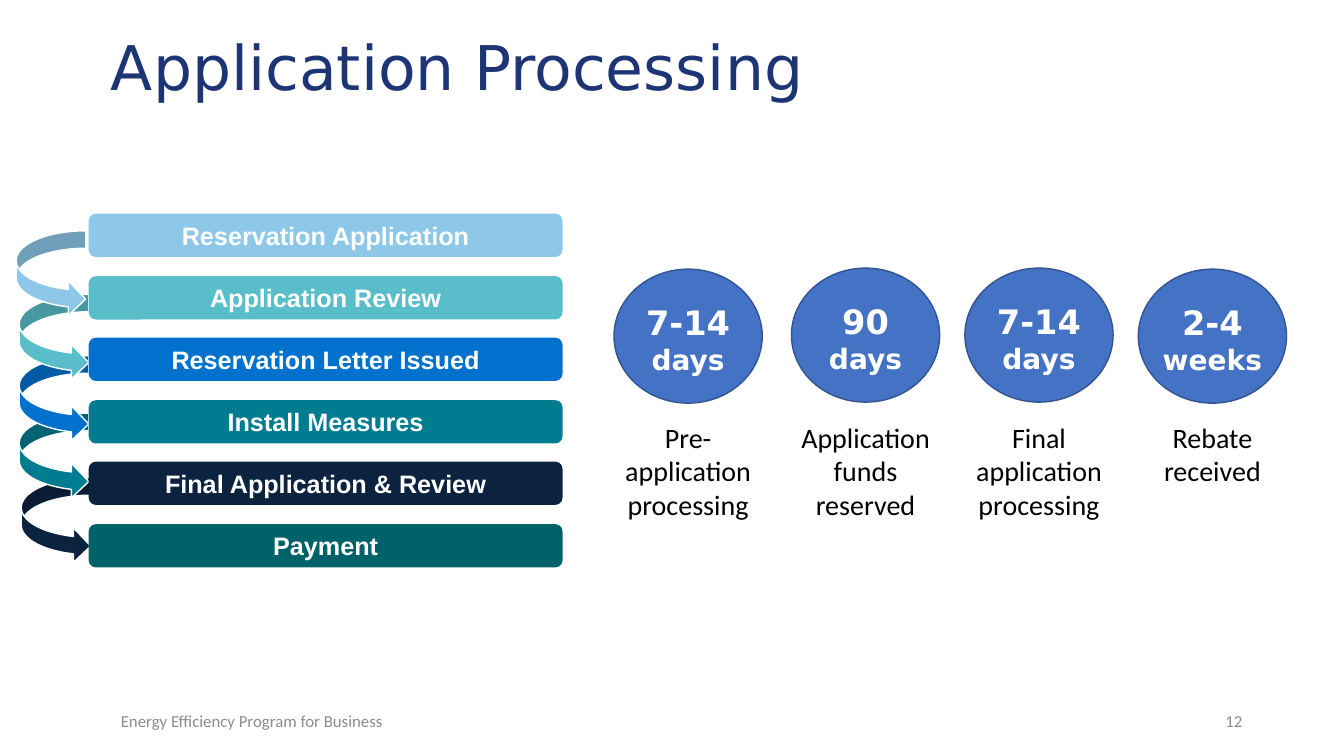
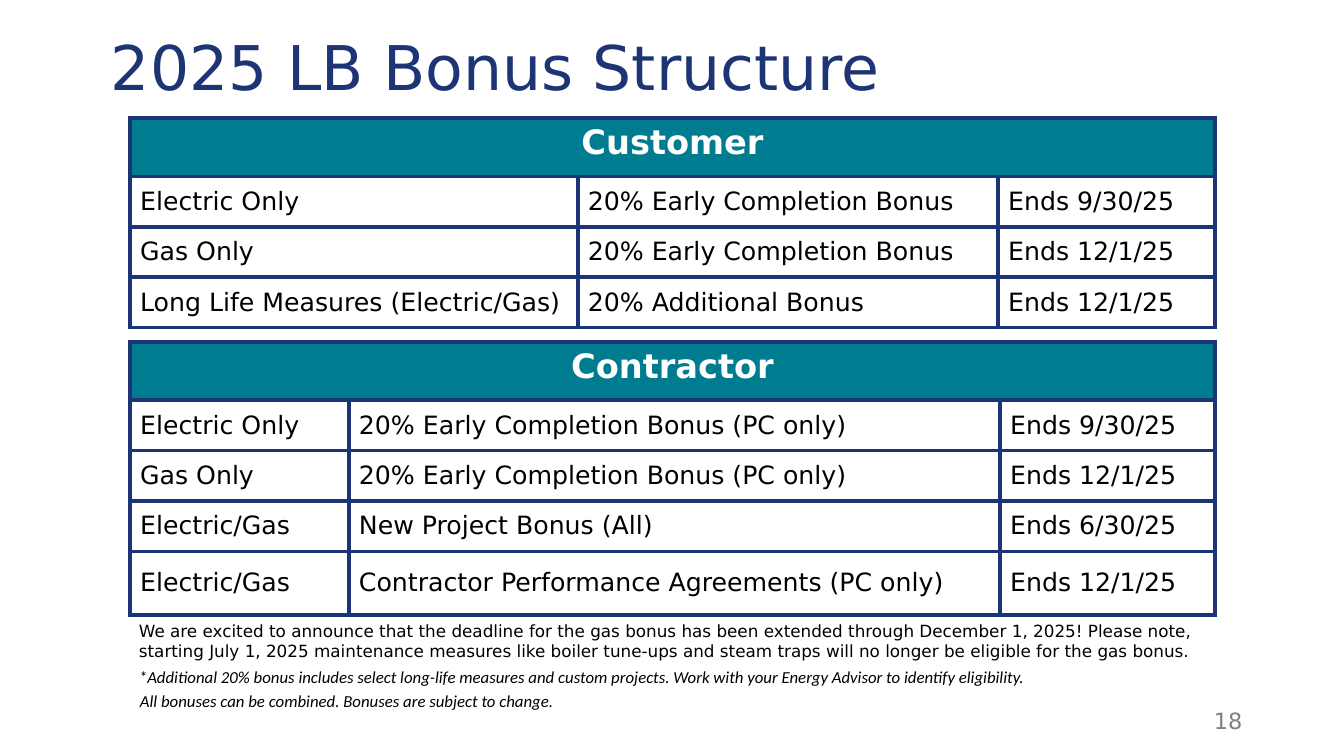
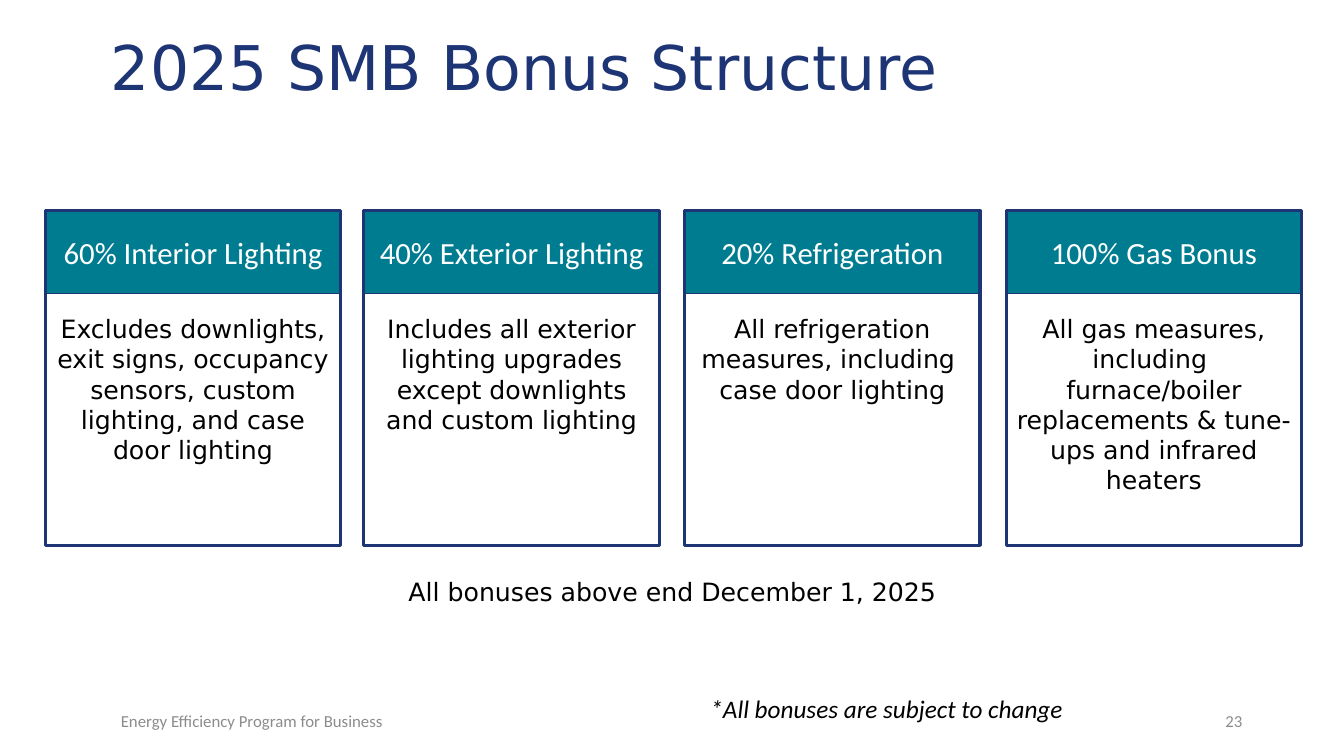
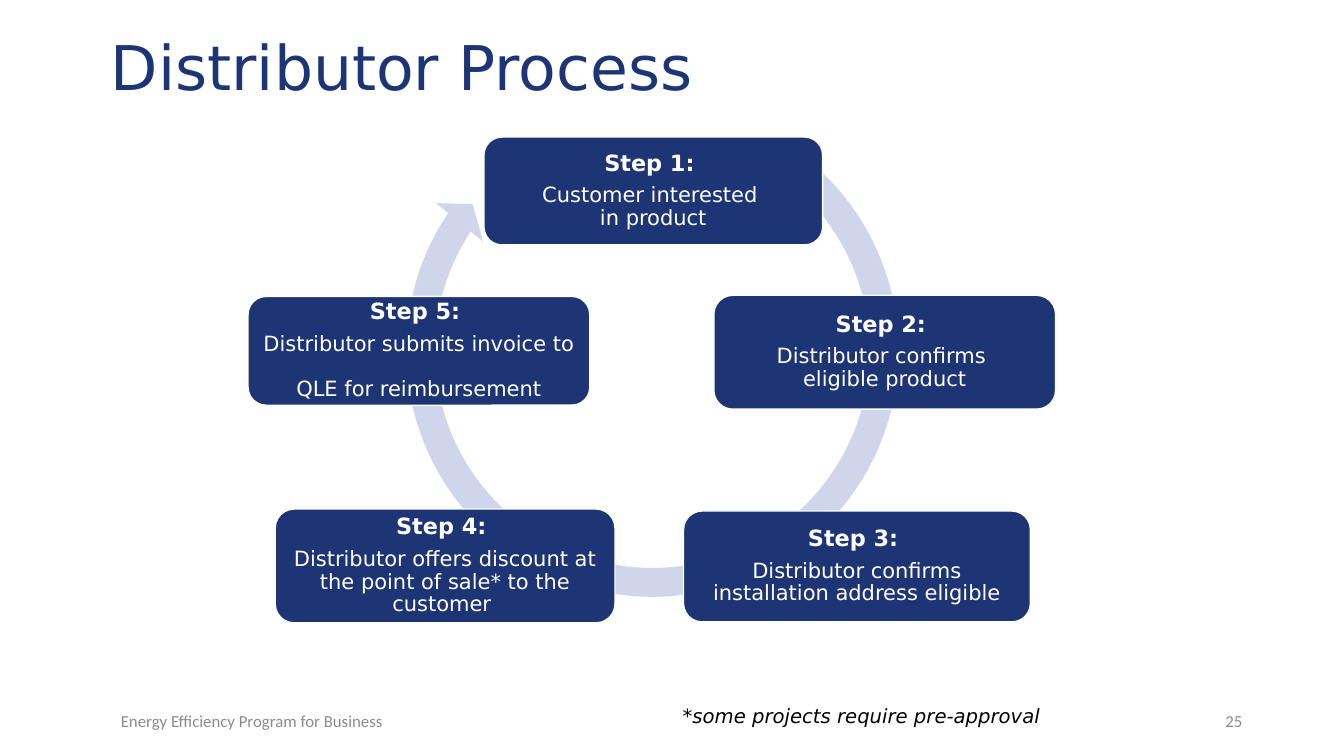
from copy import deepcopy

from lxml import etree
from pptx import Presentation
from pptx import util as u
from pptx.dml.color import RGBColor
from pptx.enum import shapes, text
from pptx.oxml import ns

# Colours
NAVY = RGBColor(0x1E, 0x35, 0x75)
TEAL = RGBColor(0x00, 0x7C, 0x91)
SKY = RGBColor(0x8D, 0xC8, 0xE8)
AQUA = RGBColor(0x59, 0xBE, 0xC9)
AZURE = RGBColor(0x00, 0x72, 0xCE)
MIDNIGHT = RGBColor(0x0C, 0x23, 0x40)
PINE = RGBColor(0x00, 0x62, 0x69)
BLUE = RGBColor(0x44, 0x72, 0xC4)
DEEP_BLUE = RGBColor(0x32, 0x54, 0x91)
PALE = RGBColor(0xCF, 0xD5, 0xEA)
GREY = RGBColor(0x8C, 0x8C, 0x8C)
MID_GREY = RGBColor(0x80, 0x80, 0x80)
BLACK = RGBColor(0, 0, 0)
WHITE = RGBColor(255, 255, 255)

PX = 9144  # EMU in one px, 100 px to the inch
SANS, CALIBRI, ARIAL = "DejaVu Sans", "Calibri", "Arial"
LEFT, CENTER, RIGHT = text.PP_ALIGN.LEFT, text.PP_ALIGN.CENTER, text.PP_ALIGN.RIGHT
TOP, MIDDLE = text.MSO_ANCHOR.TOP, text.MSO_ANCHOR.MIDDLE
KIND = shapes.MSO_SHAPE
TITLE_AND_BODY, TITLE_ONLY = 1, 5
PARA_KEYS = ("alignment", "line_spacing", "space_before", "space_after")


def look(size, name=SANS, color=BLACK, alignment=LEFT, **more):
    return dict(size=u.Pt(size), name=name, color=color, alignment=alignment, **more)


class Deck:
    """Holds the presentation, its style and the current page."""

    title_look = look(44, color=NAVY, line_spacing=0.9)
    footer_look = look(12, CALIBRI, GREY)

    def __init__(self):
        self.deck = Presentation()
        self.deck.slide_width, self.deck.slide_height = 1333 * PX, 750 * PX
        self.page = None

    def new_page(self, title, number, number_look=None, footer=True, layout=TITLE_ONLY):
        self.page = self.deck.slides.add_slide(self.deck.slide_layouts[layout])
        self.placeholder(0, (0, 0, 1333, 139), [(title, self.title_look)], MIDDLE, (110, 5, 10, 5))
        number_look = number_look or self.footer_look
        self.label((942, 695, 300, 40), [(number, {**number_look, "alignment": RIGHT})], MIDDLE)
        if footer:
            self.label((110, 695, 600, 40),
                       [("Energy Efficiency Program for Business", self.footer_look)], MIDDLE)

    def set_lines(self, frame, lines, anchor=TOP, insets=(10, 5, 10, 5)):
        """Put (text, look) paragraphs in a text frame."""
        sides = ("margin_left", "margin_top", "margin_right", "margin_bottom")
        settings = {"word_wrap": True, "auto_size": text.MSO_AUTO_SIZE.NONE, "vertical_anchor": anchor}
        settings.update((side, inset * PX) for side, inset in zip(sides, insets))
        for key, value in settings.items():
            setattr(frame, key, value)
        for index, (words, style) in enumerate(lines):
            para = frame.add_paragraph() if index else frame.paragraphs[0]
            self.set_para(para, words, style)

    def set_para(self, para, words, style):
        para.text = words
        for key, value in style.items():
            if key in PARA_KEYS:
                setattr(para, key, value)
                continue
            for span in para.runs:
                if key == "color":
                    span.font.color.rgb = value
                else:
                    setattr(span.font, key, value)
        # Line breaks take the size of the text around them
        for line_break in para._p.findall(ns.qn("a:br")):
            line_break.append(deepcopy(para.runs[0]._r.rPr))

    def placeholder(self, index, at, lines, anchor=TOP, insets=(10, 5, 10, 5)):
        box = self.page.placeholders[index]
        for key, value in zip(("left", "top", "width", "height"), at):
            setattr(box, key, value * PX)
        self.set_lines(box.text_frame, lines, anchor, insets)
        return box

    def label(self, at, lines, anchor=TOP):
        box = self.page.shapes.add_textbox(*(n * PX for n in at))
        self.set_lines(box.text_frame, lines, anchor)

    def shape(self, kind, at, fill=None, line=None, weight=1, lines=(), anchor=MIDDLE,
              insets=(10, 5, 10, 5)):
        box = self.page.shapes.add_shape(kind, *(n * PX for n in at))
        box.shadow.inherit = False
        for paint, color in ((box.fill, fill), (box.line.fill, line)):
            if color is None:
                paint.background()
            else:
                paint.solid()
                paint.fore_color.rgb = color
        if line is not None:
            box.line.width = u.Pt(weight)
        self.set_lines(box.text_frame, lines, anchor, insets)
        return box

    def table(self, left, top, widths, heights, heading, rows):
        size = (left, top, sum(widths), sum(heights))
        grid = self.page.shapes.add_table(len(heights), len(widths), *(n * PX for n in size)).table
        grid.first_row = grid.horz_banding = False
        for column, width in zip(grid.columns, widths):
            column.width = width * PX
        for row, height in zip(grid.rows, heights):
            row.height = height * PX
        grid.cell(0, 0).merge(grid.cell(0, len(widths) - 1))
        for cell in grid.iter_cells():
            cell.fill.background()
            self.border(cell)
        head = grid.cell(0, 0)
        head.fill.solid()
        head.fill.fore_color.rgb = TEAL
        self.set_para(head.text_frame.paragraphs[0], heading, look(24, SANS, WHITE, CENTER, bold=True))
        for r, row in enumerate(rows, 1):
            for c, words in enumerate(row):
                cell = grid.cell(r, c)
                cell.vertical_anchor = MIDDLE
                self.set_para(cell.text_frame.paragraphs[0], words, look(18))

    def border(self, cell):
        props = cell._tc.get_or_add_tcPr()
        for index, side in enumerate(("lnL", "lnR", "lnT", "lnB")):
            edge = etree.Element(ns.qn("a:" + side), w=str(u.Pt(3)))
            paint = etree.SubElement(edge, ns.qn("a:solidFill"))
            etree.SubElement(paint, ns.qn("a:srgbClr"), val=str(NAVY))
            props.insert(index, edge)


def application_processing(deck):
    deck.new_page("Application Processing", "12")

    # Curved arrows, the first one in front
    arrows = ((16, 229, SKY), (19, 292, AQUA), (19, 353, AZURE), (19, 410, TEAL), (21, 474, MIDNIGHT))
    for left, top, color in reversed(arrows):
        deck.shape(KIND.CURVED_RIGHT_ARROW, (left, top, 69, 85), color, WHITE)

    # Stage bars
    stages = (("Reservation Application", SKY), ("Application Review", AQUA),
              ("Reservation Letter Issued", AZURE), ("Install Measures", TEAL),
              ("Final Application & Review", MIDNIGHT), ("Payment", PINE))
    stage_look = look(18, ARIAL, WHITE, CENTER, bold=True)
    for index, (name, color) in enumerate(stages):
        deck.shape(KIND.ROUNDED_RECTANGLE, (88, round(212 + 61.6 * index), 470, 43), color,
                   lines=[(name, stage_look)])

    # Durations with captions
    durations = ((609, 267, "7-14", "days", "Pre-application\nprocessing"),
                 (785, 266, "90", "days", "Application funds reserved"),
                 (957, 266, "7-14", "days", "Final application\nprocessing"),
                 (1129, 267, "2-4", "weeks", "Rebate received"))
    for left, top, count, unit, caption in durations:
        deck.shape(KIND.OVAL, (left, top, 147, 133), BLUE, DEEP_BLUE, insets=(0, 6, 0, 0),
                   lines=[(count, look(24, SANS, WHITE, CENTER, bold=True)),
                          (unit, look(20, SANS, WHITE, CENTER, bold=True))])
        deck.label((left - 5, 412, 157, 111), [(caption, look(20, CALIBRI, BLACK, CENTER))])


def large_business_bonus(deck):
    deck.new_page("2025 LB Bonus Structure", "18", look(16, SANS, MID_GREY), footer=False)
    deck.table(129, 117, (444, 417, 215), (58, 50, 50, 50), "Customer", (
        ("Electric Only", "20% Early Completion Bonus", "Ends 9/30/25"),
        ("Gas Only", "20% Early Completion Bonus", "Ends 12/1/25"),
        ("Long Life Measures (Electric/Gas)", "20% Additional Bonus", "Ends 12/1/25")))
    deck.table(129, 339, (217, 646, 213), (58, 50, 50, 50, 63), "Contractor", (
        ("Electric Only", "20% Early Completion Bonus (PC only)", "Ends 9/30/25"),
        ("Gas Only", "20% Early Completion Bonus (PC only)", "Ends 12/1/25"),
        ("Electric/Gas", "New Project Bonus (All)", "Ends 6/30/25"),
        ("Electric/Gas", "Contractor Performance Agreements (PC only)", "Ends 12/1/25")))

    # Notes under the tables
    small = look(12, CALIBRI, italic=True)
    deck.label((128, 611, 1076, 50), [(
        "We are excited to announce that the deadline for the gas bonus has been extended through "
        "December 1, 2025! Please note, starting July 1, 2025 maintenance measures like boiler "
        "tune-ups and steam traps will no longer be eligible for the gas bonus.", look(12))])
    deck.label((128, 657, 1076, 30), [(
        "*Additional 20% bonus includes select long-life measures and custom projects. "
        "Work with your Energy Advisor to identify eligibility.", small)])
    deck.label((129, 680, 1046, 30),
               [("All bonuses can be combined. Bonuses are subject to change.", small)])


def small_business_bonus(deck):
    deck.new_page("2025 SMB Bonus Structure", "23")

    # Bonus cards
    cards = ((45, "60% Interior Lighting",
              ("Excludes downlights, exit signs, occupancy sensors, custom lighting, "
               "and case door lighting",)),
             (361, "40% Exterior Lighting",
              ("Includes all exterior lighting upgrades except downlights and custom lighting",)),
             (679, "20% Refrigeration",
              ("All refrigeration measures, including ", "case door lighting")),
             (998, "100% Gas Bonus",
              ("All gas measures, including ",
               "furnace/boiler replacements & tune-ups and infrared heaters")))
    body_look = look(18, alignment=CENTER)
    for left, heading, details in cards:
        deck.shape(KIND.RECTANGLE, (left, 209, 293, 82), TEAL, NAVY,
                   lines=[(heading, look(22, CALIBRI, WHITE, CENTER))])
        deck.shape(KIND.RECTANGLE, (left, 209, 293, 332), None, NAVY, 2.25,
                   [(detail, body_look) for detail in details], TOP, (10, 102, 10, 5))

    # Closing notes
    deck.label((339, 567, 656, 71), [("All bonuses above end December 1, 2025", body_look)])
    deck.label((606, 683, 458, 40), [("*All bonuses are subject to change",
                                      look(18, CALIBRI, BLACK, RIGHT, italic=True))])


def distributor_process(deck):
    deck.new_page("Distributor Process", "25", layout=TITLE_AND_BODY)

    # Ring behind the steps
    ring = deck.shape(KIND.CIRCULAR_ARROW, (387, 88, 520, 520), PALE)
    for index, value in enumerate((0.055, 3.307, 128.212, 179.984, 0.058)):
        ring.adjustments[index] = round(value, 2) if value > 1 else value

    # Steps
    steps = (((480, 136, 336, 107), "Customer interested \nin product"),
             ((708, 293, 339, 113), "Distributor confirms \neligible product"),
             ((678, 507, 344, 110), "Distributor confirms\ninstallation address eligible"),
             ((273, 505, 337, 113),
              "Distributor offers discount at\nthe point of sale* to the customer "),
             ((246, 294, 339, 108), "Distributor submits invoice to \nQLE for reimbursement"))
    for number, (at, action) in enumerate(steps, 1):
        deck.shape(KIND.ROUNDED_RECTANGLE, at, NAVY, WHITE, insets=(7, 7, 7, 7), lines=[
            (f"Step {number}: ", look(16, SANS, WHITE, CENTER, bold=True, line_spacing=0.9,
                                      space_after=u.Pt(6))),
            (action, look(15, SANS, WHITE, CENTER, line_spacing=0.9))])

    # Note
    note = deck.placeholder(1, (667, 682, 415, 106), [(
        "*some projects require pre-approval",
        look(14, italic=True, line_spacing=1.5, space_before=u.Pt(0)))])
    props = note.text_frame.paragraphs[0]._p.get_or_add_pPr()
    props.set("marL", "0")
    props.set("indent", "0")
    etree.SubElement(props, ns.qn("a:buNone"))


def main():
    deck = Deck()
    for build in (application_processing, large_business_bonus,
                  small_business_bonus, distributor_process):
        build(deck)
    deck.deck.save("out.pptx")


if __name__ == "__main__":
    main()
